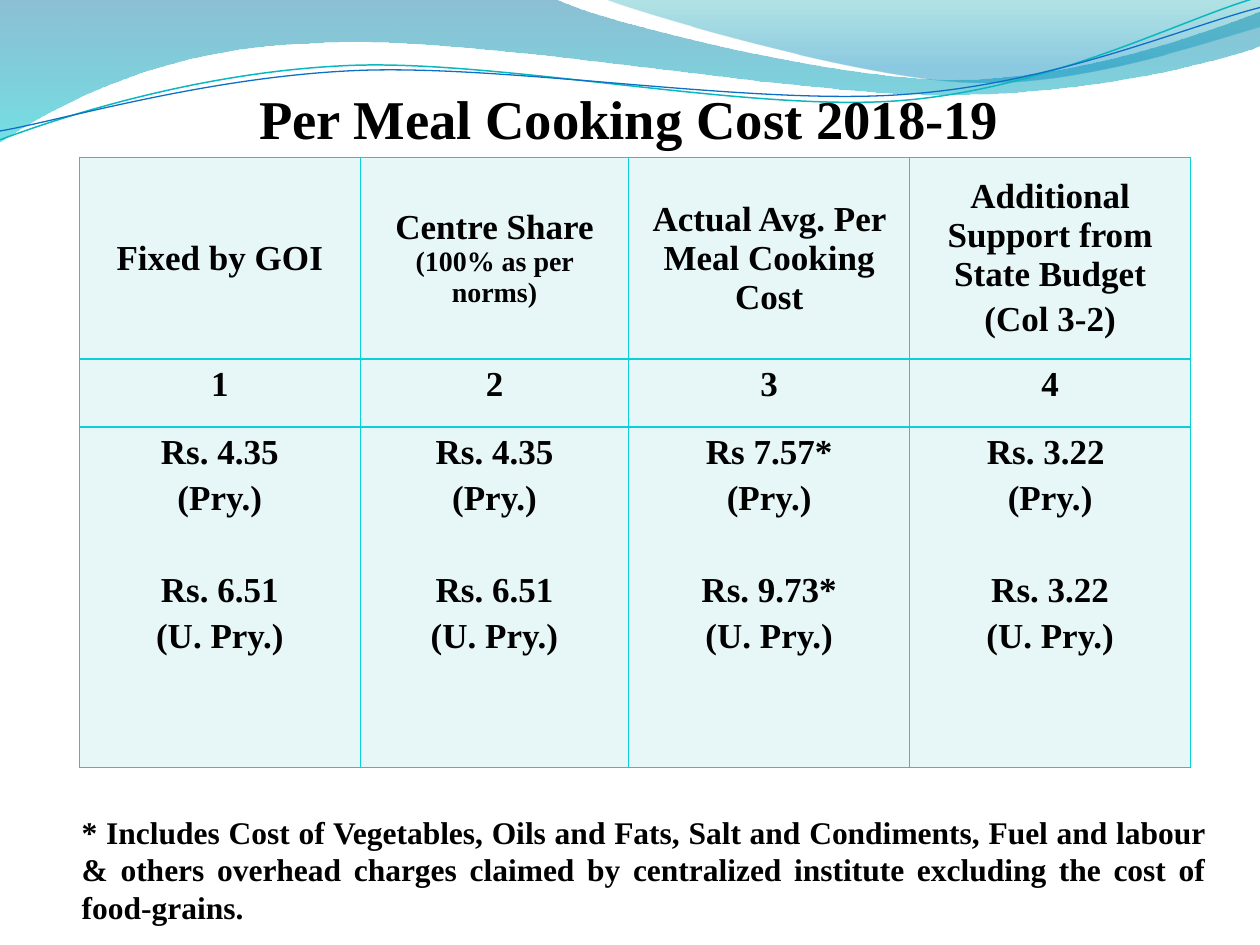
from math import cos, radians, sin
from lxml.etree import SubElement
from pptx import Presentation
from pptx.dml.color import RGBColor
from pptx.enum.text import MSO_ANCHOR, PP_ALIGN
from pptx.oxml.ns import qn
from pptx.util import Inches, Pt

FONT = "Times New Roman"
TILT = 2.7

# Outlines in inches: a start point, then lines (x, y) and curves (two handles, end)
BAND = [(0, 0), (4.4, -0.01), (4.76, 0.17, 6.64, 0.63, 7.58, 0.63),
        (8.53, 0.63, 9.58, 0.26, 10, 0.09), (10.01, 0.36),
        (9.83, 0.44, 8.7, 0.76, 7.46, 0.75), (6.22, 0.75, 3.82, 0.28, 2.57, 0.34),
        (1.29, 0.36, 0.46, 0.83, -0.01, 1.13)]
CREST = [(4.79, -0.01), (5.09, 0.11, 6.82, 0.62, 7.69, 0.65),
         (8.56, 0.69, 9.61, 0.32, 10, 0.21), (10, 0)]
TEAL = [(0, 1.11), (0.48, 0.93, 1.58, 0.57, 2.77, 0.52),
        (3.95, 0.47, 5.93, 0.89, 7.13, 0.8), (8.33, 0.71, 9.38, 0.15, 9.98, -0.02)]
BLUE = [(0, 1.04), (0.47, 0.96, 1.64, 0.61, 2.83, 0.56),
        (4.03, 0.51, 5.97, 0.84, 7.17, 0.75), (8.36, 0.67, 9.41, 0.21, 10, 0.06)]

HEADS = [["Fixed by GOI"], ["Centre Share |(100% as per norms)"],
         ["Actual Avg. Per Meal Cooking Cost"],
         ["Additional Support from State Budget", "(Col 3-2)"]]
COSTS = [("Rs. 4.35", "Rs. 6.51"), ("Rs. 4.35", "Rs. 6.51"),
         ("Rs 7.57*", "Rs. 9.73*"), ("Rs. 3.22 ", "Rs. 3.22")]
NOTE = ("* Includes Cost of Vegetables, Oils and Fats, Salt and Condiments, "
        "Fuel and labour & others overhead charges claimed by centralized "
        "institute excluding the cost of food-grains.")


def color(code):
    return RGBColor.from_string(code)


def pairs(part):
    return list(zip(part[::2], part[1::2]))


def level(outline, mid):
    """Turn an outline clockwise by the tilt, about its middle."""
    c, s = cos(radians(TILT)), sin(radians(TILT))
    turned = []
    for part in outline:
        spots = [(x - mid[0], y - mid[1]) for x, y in pairs(part)]
        turned.append(tuple(v for x, y in spots
                            for v in (mid[0] + x * c - y * s, mid[1] + x * s + y * c)))
    return turned


def add_form(slide, outline, close):
    """Build the outline from its end points, then bend the curved parts."""
    ends = [tuple(map(Inches, part[-2:])) for part in outline]
    form = slide.shapes.build_freeform(*ends[0])
    form.add_line_segments(ends[1:], close=close)
    shape = form.convert_to_shape()
    shape.shadow.inherit = False
    lines = list(shape._element.iter(qn("a:lnTo")))
    for line, part in zip(lines, outline[1:]):
        if len(part) == 2:
            continue
        curve = line.makeelement(qn("a:cubicBezTo"), {})
        for x, y in pairs(part):
            SubElement(curve, qn("a:pt"), x=str(Inches(x) - shape.left),
                       y=str(Inches(y) - shape.top))
        line.getparent().replace(line, curve)
    return shape


def add_wave(slide, outline, stops):
    """Draw a filled wave; stops are (position, colour, opacity percent)."""
    wave = add_form(slide, outline, True)
    wave.line.fill.background()
    wave.fill.gradient()
    wave.fill.gradient_angle = 270
    for stop, (place, code, _) in zip(wave.fill.gradient_stops, stops):
        stop.position = place
        stop.color.rgb = color(code)
    tags = list(wave._element.spPr.iter(qn("a:srgbClr")))
    for tag, (_, _, alpha) in zip(tags, stops):
        SubElement(tag, qn("a:alpha"), val=str(alpha * 1000))


def add_curve(slide, outline, mid, code, width):
    curve = add_form(slide, level(outline, mid), False)
    curve.rotation = 360 - TILT
    curve.fill.background()
    curve.line.color.rgb = color(code)
    curve.line.width = Pt(width)


def style(para, size, align=PP_ALIGN.CENTER):
    para.alignment = align
    font = para.font
    font.name, font.size, font.bold = FONT, Pt(size), True
    font.color.rgb = color("000000")


def add_text(slide, box, text, size, align, anchor):
    frame = slide.shapes.add_textbox(*map(Inches, box)).text_frame
    frame.word_wrap = True
    frame.vertical_anchor = anchor
    frame.paragraphs[0].text = text
    style(frame.paragraphs[0], size, align)


def add_border(cell, code, width):
    props = cell._tc.get_or_add_tcPr()
    for index, side in enumerate(("lnL", "lnR", "lnT", "lnB")):
        line = props.makeelement(qn("a:" + side), {"w": str(Pt(width))})
        fill = SubElement(line, qn("a:solidFill"))
        SubElement(fill, qn("a:srgbClr"), val=code)
        props.insert(index, line)


def fill_cell(cell, lines, anchor):
    """Write one paragraph a line; text after a bar is smaller."""
    cell.fill.solid()
    cell.fill.fore_color.rgb = color("E7F7F8")
    cell.vertical_anchor = anchor
    add_border(cell, "0BD0D9", 1)
    frame = cell.text_frame
    for index, line in enumerate(lines):
        para = frame.add_paragraph() if index else frame.paragraphs[0]
        main, _, small = line.partition("|")
        para.add_run().text = main
        style(para, 20)
        para.space_before = Pt(4)
        if small:
            run = para.add_run()
            run.text = small
            run.font.size = Pt(16)


def add_costs(slide):
    rows = [HEADS, [[str(n)] for n in range(1, 5)],
            [[low, "(Pry.)", high, "(U. Pry.)"] for low, high in COSTS]]
    widths, heights = (2.23, 2.13, 2.23, 2.23), (1.6, 0.54, 2.7)
    table = slide.shapes.add_table(3, 4, Inches(0.63), Inches(1.25),
                                   Inches(8.82), Inches(4.84)).table
    for column, width in zip(table.columns, widths):
        column.width = Inches(width)
    for r, cells in enumerate(rows):
        table.rows[r].height = Inches(heights[r])
        for c, lines in enumerate(cells):
            anchor = MSO_ANCHOR.TOP if r else MSO_ANCHOR.MIDDLE
            fill_cell(table.cell(r, c), lines, anchor)
    for cell in table.rows[2].cells:
        cell.text_frame.paragraphs[2].space_before = Pt(30.5)


def main():
    deck = Presentation()
    deck.slide_width, deck.slide_height = Inches(10), Inches(7.5)
    slide = deck.slides.add_slide(deck.slide_layouts[6])
    add_wave(slide, BAND, [(0, "0074A1", 45), (1, "00C6CF", 55)])
    add_wave(slide, CREST, [(0, "00A1A9", 30), (0.8, "008BBF", 45)])
    add_curve(slide, TEAL, (4.99, 0.57), "0AB8BF", 0.85)
    add_curve(slide, BLUE, (5, 0.59), "0F6FC6", 0.75)
    add_text(slide, (0.39, 0.54, 9.2, 0.78), "Per Meal Cooking Cost 2018-19",
             31.2, PP_ALIGN.CENTER, MSO_ANCHOR.MIDDLE)
    add_costs(slide)
    add_text(slide, (0.55, 6.4, 9.12, 1.01), NOTE, 18,
             PP_ALIGN.JUSTIFY, MSO_ANCHOR.TOP)
    deck.save("out.pptx")


if __name__ == "__main__":
    main()
